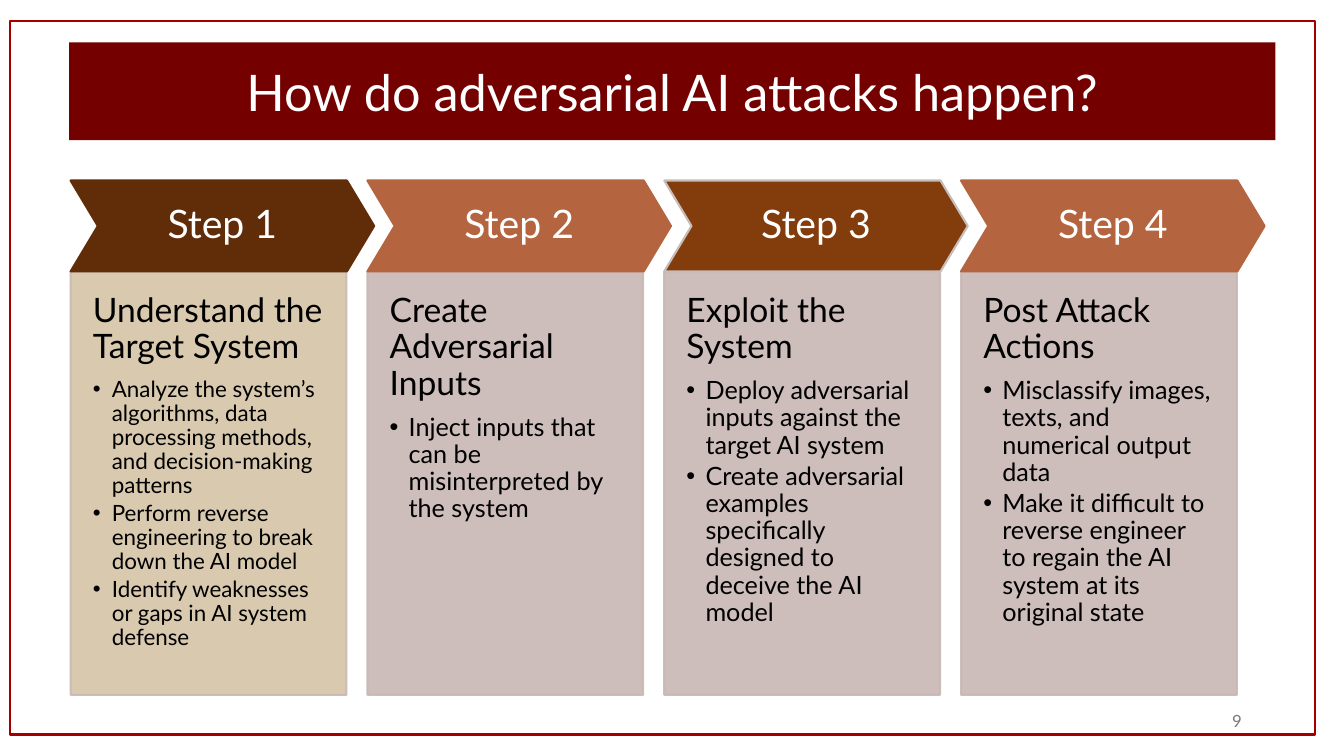
import dataclasses
import lxml.etree
import pptx
import pptx.dml.color
import pptx.enum.shapes
import pptx.enum.text
import pptx.oxml.ns
import pptx.util

Cm = pptx.util.Cm
Pt = pptx.util.Pt
ALIGN = pptx.enum.text.PP_ALIGN
ANCHOR = pptx.enum.text.MSO_ANCHOR
SHAPE = pptx.enum.shapes.MSO_SHAPE
qn = pptx.oxml.ns.qn

TITLE = "How do adversarial AI attacks happen?"
NUMBER = "9"
STEPS = [
    {"label": "Step 1", "head": "Understand the Target System", "size": 16,
     "fill": "612C08", "edge": "612C08", "panel": "D5C5A7",
     "items": ["Analyze the system’s algorithms, data processing methods, and decision-making patterns",
               "Perform reverse engineering to break down the AI model",
               "Identify weaknesses or gaps in AI system defense"]},
    {"label": "Step 2", "head": "Create Adversarial Inputs", "size": 18,
     "fill": "B56440", "edge": "B56440", "panel": "C8B8B4",
     "items": ["Inject inputs that can be misinterpreted by the system"]},
    {"label": "Step 3", "head": "Exploit the System", "size": 18,
     "fill": "833C0B", "edge": "C7BCB9", "panel": "C8B8B4",
     "items": ["Deploy adversarial inputs against the target AI system",
               "Create adversarial examples specifically designed to deceive the AI model"]},
    {"label": "Step 4", "head": "Post Attack Actions", "size": 18,
     "fill": "B56440", "edge": "B56440", "panel": "C8B8B4",
     "items": ["Misclassify images, texts, and numerical output data",
               "Make it difficult to reverse engineer to regain the AI system at its original state"]},
]


@dataclasses.dataclass
class Theme:
    font: str = "Lato"
    banner: str = "740000"
    frame: str = "A20000"
    rim: str = "C8B8B4"
    white: str = "FFFFFF"
    black: str = "000000"
    gray: str = "797979"
    title: int = 36
    label: int = 28
    head: int = 24
    number: int = 12
    line: float = 1.5
    alpha: int = 90000


THEME = Theme()
LEFT, STRIDE = 1.78, 7.48
ARROW_TOP, ARROW_W, ARROW_H = 4.55, 7.65, 2.29
PANEL_W, PANEL_H = 6.95, 10.67
INDENT = 0.48


def color(code):
    return pptx.dml.color.RGBColor.from_string(code)


def place(shape, left, top, width, height):
    shape.left, shape.top = Cm(left), Cm(top)
    shape.width, shape.height = Cm(width), Cm(height)


def paint(shape, fill=None, edge=None):
    if fill:
        shape.fill.solid()
        shape.fill.fore_color.rgb = color(fill)
    else:
        shape.fill.background()
    if edge:
        shape.line.color.rgb = color(edge)
        shape.line.width = Pt(THEME.line)
    else:
        shape.line.fill.background()


def fade(shape):
    for node in shape.element.spPr.iter(qn("a:srgbClr")):
        lxml.etree.SubElement(node, qn("a:alpha"), val=str(THEME.alpha))


def frame_text(shape, anchor, sides=(0.25, 0.13, 0.25, 0.13)):
    frame = shape.text_frame
    frame.word_wrap = True
    frame.auto_size = pptx.enum.text.MSO_AUTO_SIZE.NONE
    frame.vertical_anchor = anchor
    (frame.margin_left, frame.margin_top,
     frame.margin_right, frame.margin_bottom) = map(Cm, sides)
    return frame


def write(para, text, size, code, align, space=1.0, after=0):
    para.alignment = align
    para.line_spacing = space
    para.space_before = Pt(0)
    para.space_after = Pt(after)
    run = para.add_run()
    run.text = text
    run.font.name = THEME.font
    run.font.size = Pt(size)
    run.font.bold = False
    run.font.color.rgb = color(code)


def bullet(para, char=None):
    props = para._p.get_or_add_pPr()
    margin = Cm(INDENT) if char else 0
    props.set("marL", str(margin))
    props.set("indent", str(-margin))
    if char:
        lxml.etree.SubElement(props, qn("a:buFont"), typeface="Arial")
        lxml.etree.SubElement(props, qn("a:buChar"), char=char)
    else:
        lxml.etree.SubElement(props, qn("a:buNone"))


def add_panel(panel, step, left):
    place(panel, left, ARROW_TOP + ARROW_H, PANEL_W, PANEL_H)
    paint(panel, step["panel"], THEME.rim)
    fade(panel)
    frame = frame_text(panel, ANCHOR.TOP, (0.56, 0.56, 0.56, 1.09))
    para = frame.paragraphs[0]
    write(para, step["head"], THEME.head, THEME.black, ALIGN.LEFT, 0.9, THEME.head * 0.35)
    bullet(para)
    for item in step["items"]:
        para = frame.add_paragraph()
        para.level = 1
        write(para, item, step["size"], THEME.black, ALIGN.LEFT, 0.9, step["size"] * 0.15)
        bullet(para, "•")


def add_arrow(slide, step, left):
    arrow = slide.shapes.add_shape(SHAPE.CHEVRON, Cm(left), Cm(ARROW_TOP), Cm(ARROW_W), Cm(ARROW_H))
    arrow.adjustments[0] = 0.3
    arrow.shadow.inherit = False
    paint(arrow, step["fill"], step["edge"])
    frame = frame_text(arrow, ANCHOR.MIDDLE)
    write(frame.paragraphs[0], step["label"], THEME.label, THEME.white, ALIGN.CENTER, 0.9)


def main():
    deck = pptx.Presentation()
    deck.slide_width, deck.slide_height = Cm(33.87), Cm(19.05)
    slide = deck.slides.add_slide(deck.slide_layouts.get_by_name("Comparison"))

    title = slide.shapes.title
    place(title, 1.74, 1.07, 30.4, 2.46)
    paint(title, THEME.banner)
    frame = frame_text(title, ANCHOR.MIDDLE)
    write(frame.paragraphs[0], TITLE, THEME.title, THEME.white, ALIGN.CENTER)

    border = slide.shapes.add_shape(SHAPE.RECTANGLE, Cm(0.25), Cm(0.53), Cm(32.89), Cm(17.98))
    border.shadow.inherit = False
    paint(border, edge=THEME.frame)

    number = slide.shapes.add_textbox(Cm(23.93), Cm(17.65), Cm(7.62), Cm(1.02))
    frame = frame_text(number, ANCHOR.MIDDLE)
    write(frame.paragraphs[0], NUMBER, THEME.number, THEME.gray, ALIGN.RIGHT)

    bodies = [hold for hold in slide.placeholders if hold.placeholder_format.idx > 0]
    for rank, (step, panel) in enumerate(zip(STEPS, bodies)):
        left = LEFT + rank * STRIDE
        add_panel(panel, step, left)
        add_arrow(slide, step, left)

    deck.save("out.pptx")


if __name__ == "__main__":
    main()
